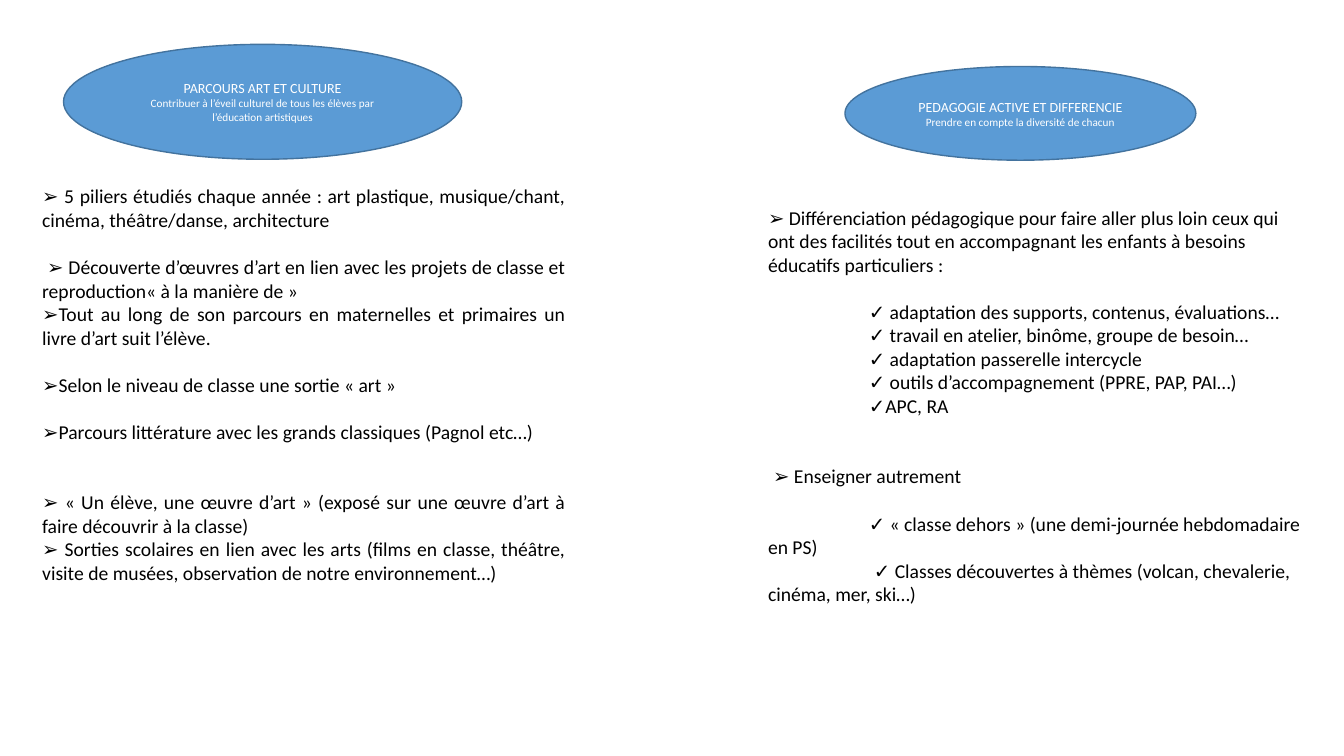
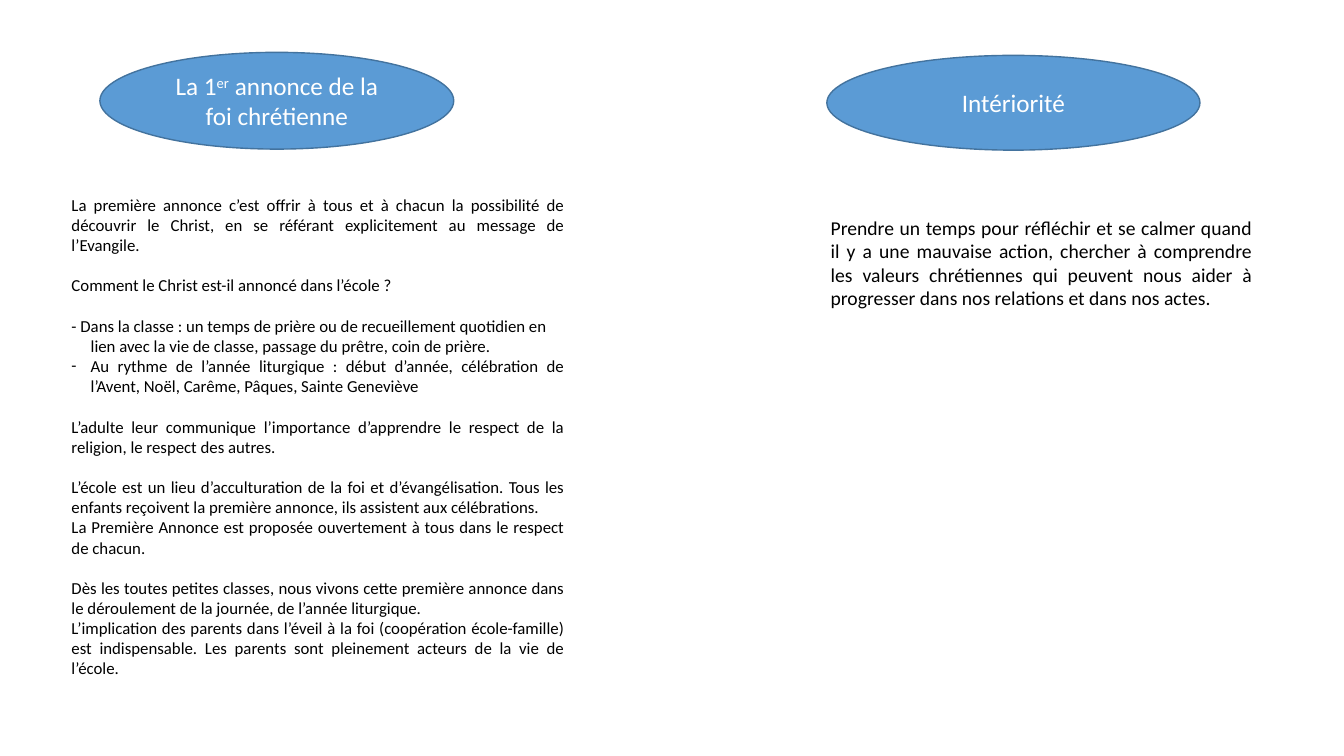
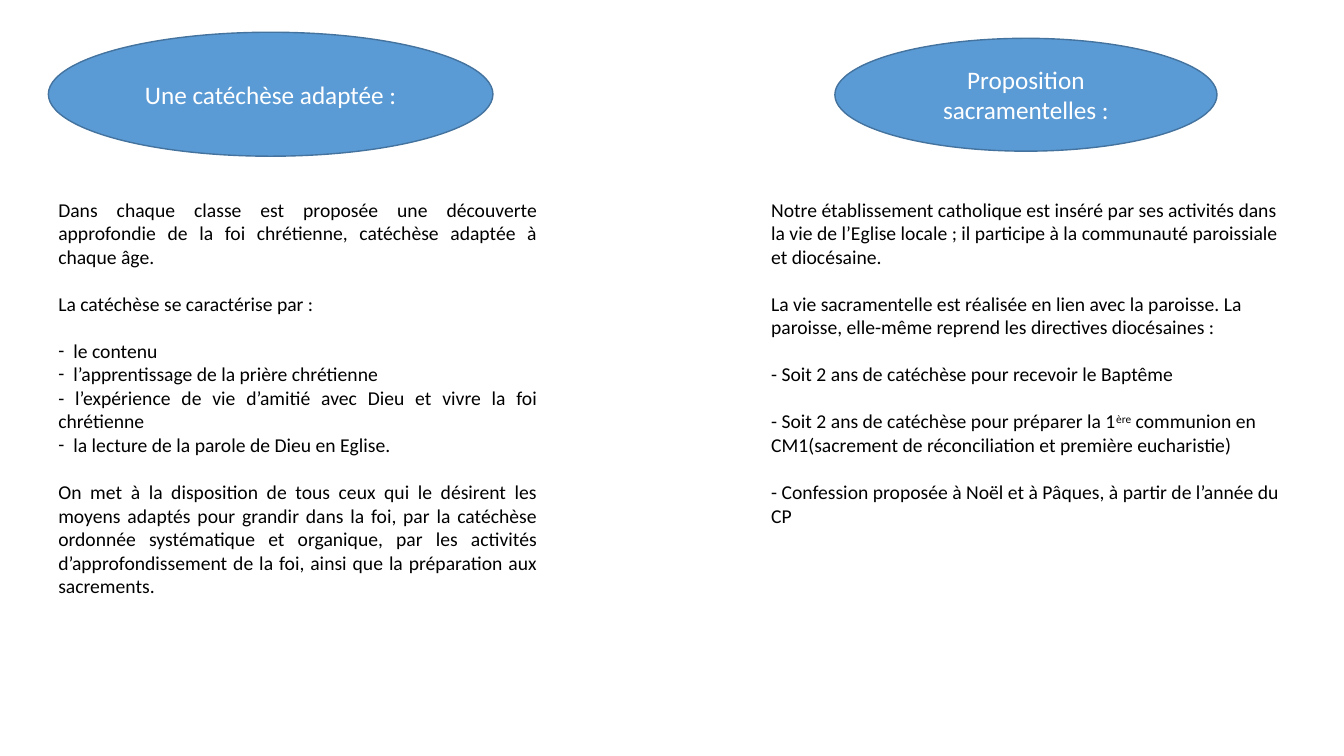
from lxml import etree
from pptx import Presentation
from pptx.dml.color import RGBColor
from pptx.enum.shapes import MSO_SHAPE
from pptx.enum.text import MSO_ANCHOR, MSO_AUTO_SIZE, PP_ALIGN
from pptx.oxml.ns import qn
from pptx.util import Inches, Pt

ELLIPSE = MSO_SHAPE.OVAL
MIDDLE = MSO_ANCHOR.MIDDLE
FIT = MSO_AUTO_SIZE.SHAPE_TO_FIT_TEXT
LEFT, CENTER, JUSTIFY = PP_ALIGN.LEFT, PP_ALIGN.CENTER, PP_ALIGN.JUSTIFY

FONT = "Calibri"
BLUE, OUTLINE, WHITE, BLACK = "5B9BD5", "43739E", "FFFFFF", "000000"
LINE_HEIGHT = 1.2
BLANK_LAYOUT = 6

GAP = dict(gap=1)
WIDE_GAP = dict(gap=2)
TICK = dict(first=1)


def rgb(value):
    """Turn a hex string into a colour."""
    return RGBColor.from_string(value)


def write(p, text, size=14, color=BLACK, align=LEFT, gap=0, first=0, left=0, bullet=None):
    """Fill a paragraph; ^ marks enclose superscript and gap counts lines."""
    p.alignment = align
    p.space_before = Pt(round(gap * size * LINE_HEIGHT, 1))
    pPr = p._p.get_or_add_pPr()
    pPr.set("marL", str(Inches(left)))
    pPr.set("indent", str(Inches(first)))
    if bullet:
        etree.SubElement(pPr, qn("a:buFont")).set("typeface", FONT)
        etree.SubElement(pPr, qn("a:buChar")).set("char", bullet)
    for i, part in enumerate(text.split("^")):
        r = p.add_run()
        r.text = part
        r.font.name = FONT
        r.font.size = Pt(size)
        r.font.color.rgb = rgb(color)
        if i % 2:
            r._r.get_or_add_rPr().set("baseline", "30000")


class Deck:
    """Holds the presentation, its style and the current slide."""

    def __init__(self):
        """Start a widescreen presentation."""
        self.prs = Presentation()
        self.prs.slide_width = Inches(13.33)
        self.prs.slide_height = Inches(7.5)

    def add_slide(self):
        """Open a new blank slide."""
        self.slide = self.prs.slides.add_slide(self.prs.slide_layouts[BLANK_LAYOUT])

    def place(self, x, y, w, h):
        """Convert percentages of the slide into lengths."""
        width, height = self.prs.slide_width, self.prs.slide_height
        return [round(share * full / 100)
                for share, full in ((x, width), (y, height), (w, width), (h, height))]

    def fill_frame(self, tf, items, **style):
        """Write each item, a text or a text with its format, as a paragraph."""
        tf.word_wrap = True
        for i, item in enumerate(items):
            text, fmt = (item, {}) if isinstance(item, str) else item
            p = tf.add_paragraph() if i else tf.paragraphs[0]
            write(p, text, **{**style, **fmt})

    def bubble(self, box, *items, size=18):
        """Draw a heading ellipse."""
        sp = self.slide.shapes.add_shape(ELLIPSE, *self.place(*box))
        sp.shadow.inherit = False
        sp.fill.solid()
        sp.fill.fore_color.rgb = rgb(BLUE)
        sp.line.color.rgb = rgb(OUTLINE)
        sp.line.width = Pt(1)
        sp.text_frame.vertical_anchor = MIDDLE
        self.fill_frame(sp.text_frame, items, size=size, color=WHITE, align=CENTER)

    def body(self, box, *items, **style):
        """Add a block of paragraphs."""
        tf = self.slide.shapes.add_textbox(*self.place(*box)).text_frame
        tf.auto_size = FIT
        self.fill_frame(tf, items, **style)


def culture_and_pedagogy(deck):
    """Build the slide on art, culture and active teaching."""
    deck.add_slide()
    subtitle = dict(size=8)
    deck.bubble(
        (4.73, 5.87, 29.63, 15.2),
        "PARCOURS ART ET CULTURE",
        ("Contribuer à l’éveil culturel de tous les élèves par l’éducation artistiques", subtitle),
        size=10)
    deck.body(
        (2.4, 23.73, 40.44, 54.8),
        "➢ 5 piliers étudiés chaque année : art plastique, musique/chant, cinéma, "
        "théâtre/danse, architecture",
        ("➢ Découverte d’œuvres d’art en lien avec les projets de classe et "
         "reproduction« à la manière de »", dict(gap=1, first=0.05)),
        "➢Tout au long de son parcours en maternelles et primaires un livre d’art suit l’élève.",
        ("➢Selon le niveau de classe une sortie « art »", GAP),
        ("➢Parcours littérature avec les grands classiques (Pagnol etc…)", GAP),
        ("➢ « Un élève, une œuvre d’art » (exposé sur une œuvre d’art à faire "
         "découvrir à la classe)", WIDE_GAP),
        "➢ Sorties scolaires en lien avec les arts (films en classe, théâtre, visite de "
        "musées, observation de notre environnement…)",
        align=JUSTIFY)
    deck.bubble(
        (62.87, 8.8, 26.11, 12.4),
        "PEDAGOGIE ACTIVE ET DIFFERENCIE",
        ("Prendre en compte la diversité de chacun", subtitle),
        size=10)
    deck.body(
        (56.41, 26.53, 41.71, 54.8),
        "➢ Différenciation pédagogique pour faire aller plus loin ceux qui ont des facilités "
        "tout en accompagnant les enfants à besoins éducatifs particuliers :",
        ("✓ adaptation des supports, contenus, évaluations…", {**TICK, **GAP}),
        ("✓ travail en atelier, binôme, groupe de besoin…", TICK),
        ("✓ adaptation passerelle intercycle", TICK),
        ("✓ outils d’accompagnement (PPRE, PAP, PAI…)", TICK),
        ("✓APC, RA", TICK),
        ("➢ Enseigner autrement", dict(gap=2, first=0.05)),
        ("✓ « classe dehors » (une demi-journée hebdomadaire en PS)", {**TICK, **GAP}),
        ("✓ Classes découvertes à thèmes (volcan, chevalerie, cinéma, mer, ski…)",
         dict(first=1.05)))


def announcement_and_interiority(deck):
    """Build the slide on the first announcement and inner life."""
    deck.add_slide()
    hanging = dict(left=0.19, first=-0.19)
    deck.bubble((7.43, 6.93, 26.33, 12.8), "La 1^er^ annonce de la foi chrétienne")
    deck.body(
        (4.58, 25.07, 38.18, 66),
        "La première annonce c’est offrir à tous et à chacun la possibilité de découvrir le "
        "Christ, en se référant explicitement au message de l’Evangile.",
        ("Comment le Christ est-il annoncé dans l’école ?", GAP),
        ("- Dans la classe : un temps de prière ou de recueillement quotidien en lien avec la "
         "vie de classe, passage du prêtre, coin de prière.", dict(gap=1, align=LEFT, **hanging)),
        ("Au rythme de l’année liturgique : début d’année, célébration de l’Avent, Noël, "
         "Carême, Pâques, Sainte Geneviève", dict(bullet="-", **hanging)),
        ("L’adulte leur communique l’importance d’apprendre le respect de la religion, le "
         "respect des autres.", GAP),
        ("L’école est un lieu d’acculturation de la foi et d’évangélisation. Tous les enfants "
         "reçoivent la première annonce, ils assistent aux célébrations.", GAP),
        "La Première Annonce est proposée ouvertement à tous dans le respect de chacun.",
        ("Dès les toutes petites classes, nous vivons cette première annonce dans le "
         "déroulement de la journée, de l’année liturgique.", GAP),
        "L’implication des parents dans l’éveil à la foi (coopération école-famille) est "
        "indispensable. Les parents sont pleinement acteurs de la vie de l’école.",
        size=12, align=JUSTIFY)
    deck.bubble((61.52, 7.33, 27.76, 12.53), "Intériorité")
    deck.body(
        (61.07, 27.87, 32.86, 13.87),
        "Prendre un temps pour réfléchir et se calmer quand il y a une mauvaise action, "
        "chercher à comprendre les valeurs chrétiennes qui peuvent nous aider à progresser "
        "dans nos relations et dans nos actes.",
        align=JUSTIFY)


def catechesis_and_sacraments(deck):
    """Build the slide on catechesis and the sacraments."""
    deck.add_slide()
    dash = dict(left=0.15, first=-0.15, bullet="-")
    deck.bubble((3.6, 4.27, 33.08, 16.4), "Une catéchèse adaptée :")
    deck.body(
        (3.6, 25.47, 37.13, 54.8),
        "Dans chaque classe est proposée une découverte approfondie de la foi chrétienne, "
        "catéchèse adaptée à chaque âge.",
        ("La catéchèse se caractérise par :", GAP),
        ("le contenu", {**dash, **GAP}),
        ("l’apprentissage de la prière chrétienne", dash),
        "- l’expérience de vie d’amitié avec Dieu et vivre la foi chrétienne",
        ("la lecture de la parole de Dieu en Eglise.", dash),
        ("On met à la disposition de tous ceux qui le désirent les moyens adaptés pour grandir "
         "dans la foi, par la catéchèse ordonnée systématique et organique, par les activités "
         "d’approfondissement de la foi, ainsi que la préparation aux sacrements.", GAP),
        align=JUSTIFY)
    deck.bubble((62.12, 5.07, 28.43, 14.93), "Proposition sacramentelles :")
    deck.body(
        (56.64, 25.47, 39.98, 45.33),
        "Notre établissement catholique est inséré par ses activités dans la vie de l’Eglise "
        "locale ; il participe à la communauté paroissiale et diocésaine.",
        ("La vie sacramentelle est réalisée en lien avec la paroisse. La paroisse, elle-même "
         "reprend les directives diocésaines :", GAP),
        ("- Soit 2 ans de catéchèse pour recevoir le Baptême", GAP),
        ("- Soit 2 ans de catéchèse pour préparer la 1^ère^ communion en CM1(sacrement de "
         "réconciliation et première eucharistie)", GAP),
        ("- Confession proposée à Noël et à Pâques, à partir de l’année du CP", GAP))


def main():
    """Build and save the presentation."""
    deck = Deck()
    culture_and_pedagogy(deck)
    announcement_and_interiority(deck)
    catechesis_and_sacraments(deck)
    deck.prs.save("out.pptx")


if __name__ == "__main__":
    main()
